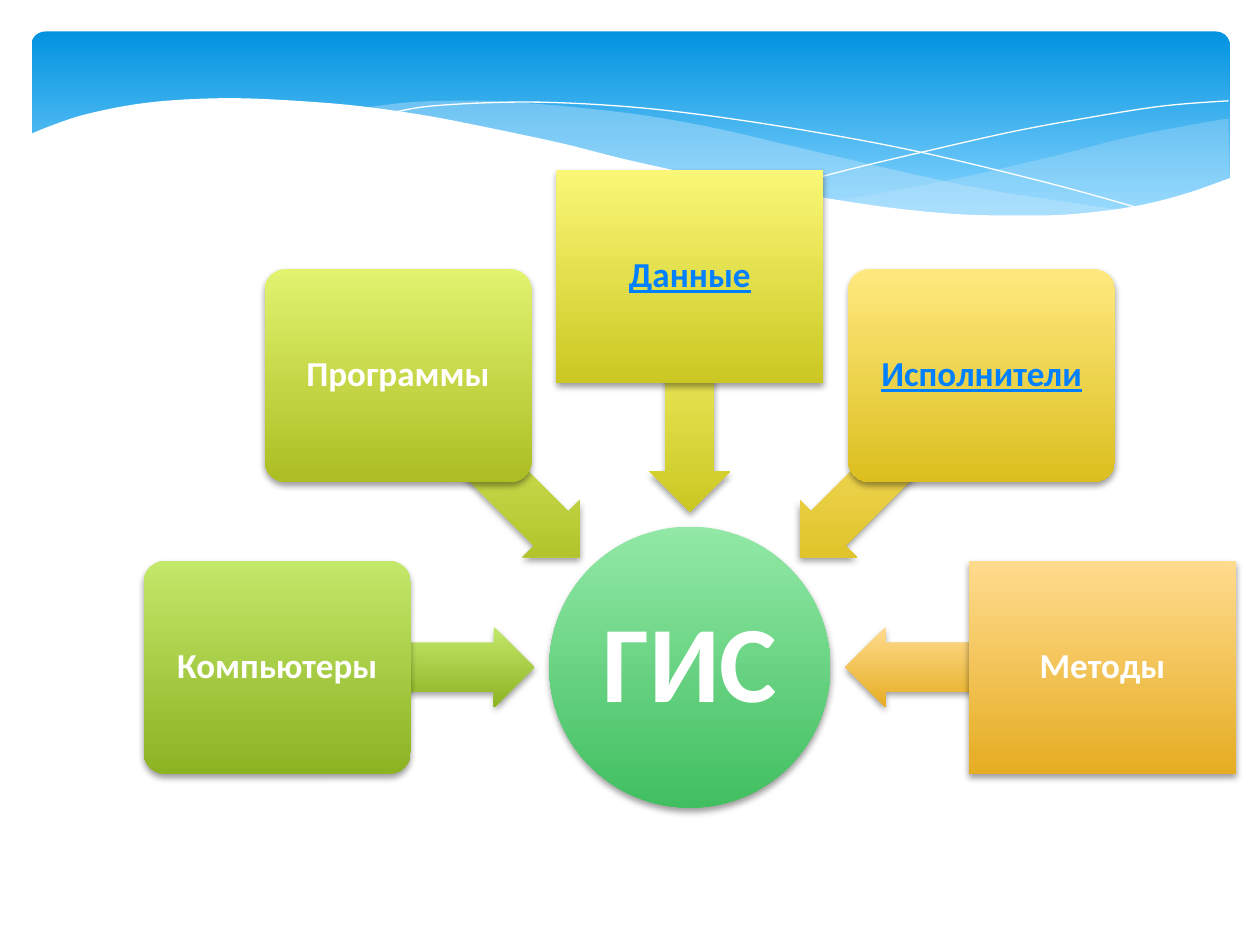
from dataclasses import dataclass
from math import cos, radians, sin
from typing import Optional

from lxml import etree
from pptx import Presentation
from pptx.dml.color import RGBColor
from pptx.enum.shapes import MSO_SHAPE
from pptx.enum.text import MSO_ANCHOR, PP_ALIGN
from pptx.oxml.ns import qn
from pptx.util import Inches, Pt

ROUNDED = MSO_SHAPE.ROUNDED_RECTANGLE
BUTTON = MSO_SHAPE.ACTION_BUTTON_CUSTOM
ELLIPSE = MSO_SHAPE.OVAL
ARROW = MSO_SHAPE.LEFT_ARROW
MIDDLE = MSO_ANCHOR.MIDDLE
CENTER = PP_ALIGN.CENTER

Point = tuple[float, float]
Curve = list[Point]


@dataclass(frozen=True)
class Theme:
    font: str = "Calibri"
    white: str = "FFFFFF"
    link: str = "0080FF"
    mist: str = "C6E7FC"
    banner: tuple[str, str] = ("0293E0", "83D3FE")
    hub: tuple[str, str] = ("92E8A6", "41BF60")
    hub_size: int = 62
    label_size: int = 20


@dataclass(frozen=True)
class Wave:
    curves: list[Curve]
    fill: Optional[str] = None
    opacity: int = 100


@dataclass(frozen=True)
class Component:
    label: str
    angle: int
    radius: float
    colors: tuple[str, str]
    outline: MSO_SHAPE = ROUNDED
    linked: bool = False


THEME = Theme()
HUB_CENTER = (5.475, 5.295)
HUB_DIAMETER = 2.23
BOX_SIZE = (2.12, 1.69)
ARROW_TIP_RADIUS = 1.235
ARROW_HEIGHT = 0.64
CURVE_STEPS = 6

WAVES = [
    Wave([
        [(9.75, 0.94), (9.35, 1.01), (8.91, 1.1), (8.32, 1.25), (7.53, 1.43), (6.61, 1.6)],
        [(6.61, 1.6), (7.19, 1.67), (7.69, 1.71), (8.24, 1.72), (8.72, 1.69),
         (9.21, 1.6), (9.49, 1.52), (9.76, 1.41)],
    ], THEME.mist, 29),
    Wave([
        [(8.93, 1.67), (8.37, 1.59), (7.75, 1.49), (7.06, 1.34), (6.29, 1.16),
         (5.69, 1.02), (5.14, 0.92), (4.65, 0.86), (4.2, 0.82), (3.8, 0.8),
         (3.28, 0.81), (2.86, 0.86)],
        [(2.86, 0.86), (3.42, 0.94), (4.04, 1.06), (4.91, 1.26), (5.66, 1.43),
         (6.34, 1.56), (6.95, 1.65), (7.48, 1.7), (8.07, 1.73), (8.48, 1.72), (8.93, 1.67)],
    ], THEME.mist, 40),
    Wave([[(3.09, 0.9), (3.44, 0.84), (4.16, 0.81), (4.89, 0.84), (5.56, 0.91),
           (6.36, 1.03), (7.27, 1.2), (8.31, 1.45), (9.07, 1.66)]]),
    Wave([[(6.13, 1.51), (6.72, 1.35), (7.48, 1.17), (8.06, 1.04), (8.66, 0.93),
           (9.24, 0.84), (9.75, 0.8)]]),
    Wave([
        [(9.77, 1.41), (9.4, 1.54), (8.99, 1.64), (8.5, 1.7), (8.09, 1.71),
         (7.61, 1.7), (7.08, 1.65), (6.48, 1.56), (5.79, 1.44), (5.03, 1.28),
         (4.47, 1.14), (3.91, 1.02), (3.4, 0.92), (2.92, 0.85), (2.5, 0.81),
         (1.93, 0.78), (1.46, 0.79), (1.06, 0.83), (0.67, 0.91), (0.4, 1), (0.23, 1.07)],
        [(0.23, 2.24), (9.77, 2.24)],
    ], THEME.white),
]

COMPONENTS = [
    Component("Компьютеры", 180, 3.275, ("C3E86A", "8DB222")),
    Component("Программы", 135, 3.275, ("E1F36F", "ACBE23")),
    Component("Данные", 90, 3.1, ("FAF777", "CBC823"), BUTTON, True),
    Component("Исполнители", 45, 3.275, ("FFE97F", "DCBF1F"), linked=True),
    Component("Методы", 0, 3.275, ("FFDB8E", "E6AD22"), BUTTON),
]


def smooth(curve: Curve) -> Curve:
    padded = [curve[0], *curve, curve[-1]]
    points = [curve[0]]
    for before, start, end, after in zip(padded, padded[1:], padded[2:], padded[3:]):
        for step in range(1, CURVE_STEPS + 1):
            t = step / CURVE_STEPS
            points.append(tuple(
                (2 * b + (c - a) * t + (2 * a - 5 * b + 4 * c - d) * t**2
                 + (3 * b - a - 3 * c + d) * t**3) / 2
                for a, b, c, d in zip(before, start, end, after)
            ))
    return points


def draw_wave(slide, wave: Wave) -> None:
    points = [(Inches(x), Inches(y)) for curve in wave.curves for x, y in smooth(curve)]
    builder = slide.shapes.build_freeform(*points[0])
    builder.add_line_segments(points[1:], close=wave.fill is not None)
    shape = builder.convert_to_shape()
    shape.shadow.inherit = False
    if wave.fill is None:
        shape.fill.background()
        shape.line.color.rgb = RGBColor.from_string(THEME.white)
        shape.line.width = Pt(0)
        return
    shape.line.fill.background()
    shape.fill.solid()
    shape.fill.fore_color.rgb = RGBColor.from_string(wave.fill)
    color = shape._element.spPr.find(f"{qn('a:solidFill')}/{qn('a:srgbClr')}")
    etree.SubElement(color, qn("a:alpha"), val=str(wave.opacity * 1000))


def add_gradient_shape(slide, outline: MSO_SHAPE, center: Point, size: Point,
                       colors: tuple[str, str], last_stop: float = 1.0):
    left, top = (middle - length / 2 for middle, length in zip(center, size))
    shape = slide.shapes.add_shape(outline, *map(Inches, (left, top, *size)))
    shape.line.fill.background()
    shape.shadow.inherit = False
    shape.fill.gradient()
    shape.fill.gradient_angle = 270
    for stop, color, position in zip(shape.fill.gradient_stops, colors, (0, last_stop)):
        stop.color.rgb = RGBColor.from_string(color)
        stop.position = position
    shape._element.spPr.find(qn("a:gradFill")).set("rotWithShape", "0")
    return shape


def add_shadow(shape) -> None:
    effects = shape._element.spPr.find(qn("a:effectLst"))
    shadow = etree.SubElement(effects, qn("a:outerShdw"), blurRad=str(Pt(4)),
                              dist=str(Pt(2)), dir="5400000", rotWithShape="0")
    color = etree.SubElement(shadow, qn("a:srgbClr"), val="000000")
    etree.SubElement(color, qn("a:alpha"), val="38000")


def write_label(shape, text: str, size: int, color: str, underline: bool = False) -> None:
    frame = shape.text_frame
    paragraph = frame.paragraphs[0]
    run = paragraph.add_run()
    run.text = text
    margins = dict.fromkeys(
        ("margin_left", "margin_right", "margin_top", "margin_bottom"), Inches(0.04))
    formats = (
        (frame, {"word_wrap": True, "vertical_anchor": MIDDLE, **margins}),
        (paragraph, {"alignment": CENTER, "line_spacing": 0.9}),
        (run.font, {"name": THEME.font, "size": Pt(size), "bold": True,
                    "underline": underline}),
    )
    for target, values in formats:
        for name, value in values.items():
            setattr(target, name, value)
    run.font.color.rgb = RGBColor.from_string(color)


def point_at(angle: int, radius: float) -> Point:
    x, y = HUB_CENTER
    return x + radius * cos(radians(angle)), y - radius * sin(radians(angle))


def draw_component(slide, component: Component) -> None:
    arrow_center = point_at(component.angle, (component.radius + ARROW_TIP_RADIUS) / 2)
    arrow_size = (component.radius - ARROW_TIP_RADIUS, ARROW_HEIGHT)
    arrow = add_gradient_shape(slide, ARROW, arrow_center, arrow_size, component.colors)
    arrow.adjustments[0] = 0.6
    arrow.rotation = -component.angle % 360
    add_shadow(arrow)

    box = add_gradient_shape(slide, component.outline,
                             point_at(component.angle, component.radius),
                             BOX_SIZE, component.colors)
    if component.outline == ROUNDED:
        box.adjustments[0] = 0.1
    add_shadow(box)
    color = THEME.link if component.linked else THEME.white
    write_label(box, component.label, THEME.label_size, color, component.linked)


def main() -> None:
    presentation = Presentation()
    presentation.slide_width, presentation.slide_height = Inches(10), Inches(7.5)
    slide = presentation.slides.add_slide(presentation.slide_layouts[6])

    banner = add_gradient_shape(slide, ROUNDED, (5.005, 1.03), (9.51, 1.56),
                                THEME.banner, 0.9)
    banner.adjustments[0] = 0.07
    for wave in WAVES:
        draw_wave(slide, wave)

    hub = add_gradient_shape(slide, ELLIPSE, HUB_CENTER, (HUB_DIAMETER, HUB_DIAMETER),
                             THEME.hub)
    add_shadow(hub)
    write_label(hub, "ГИС", THEME.hub_size, THEME.white)
    for component in COMPONENTS:
        draw_component(slide, component)

    presentation.save("out.pptx")


if __name__ == "__main__":
    main()
